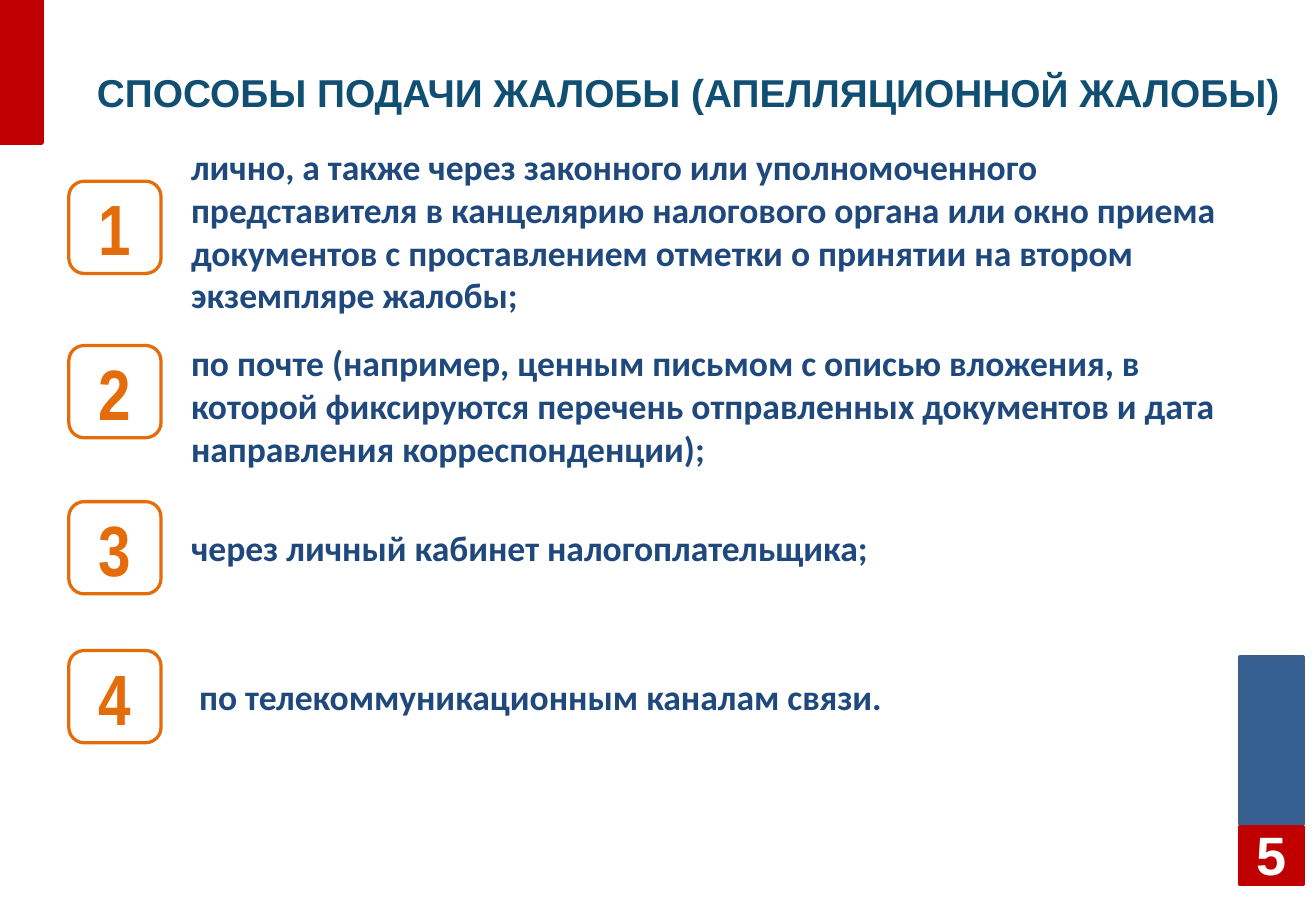
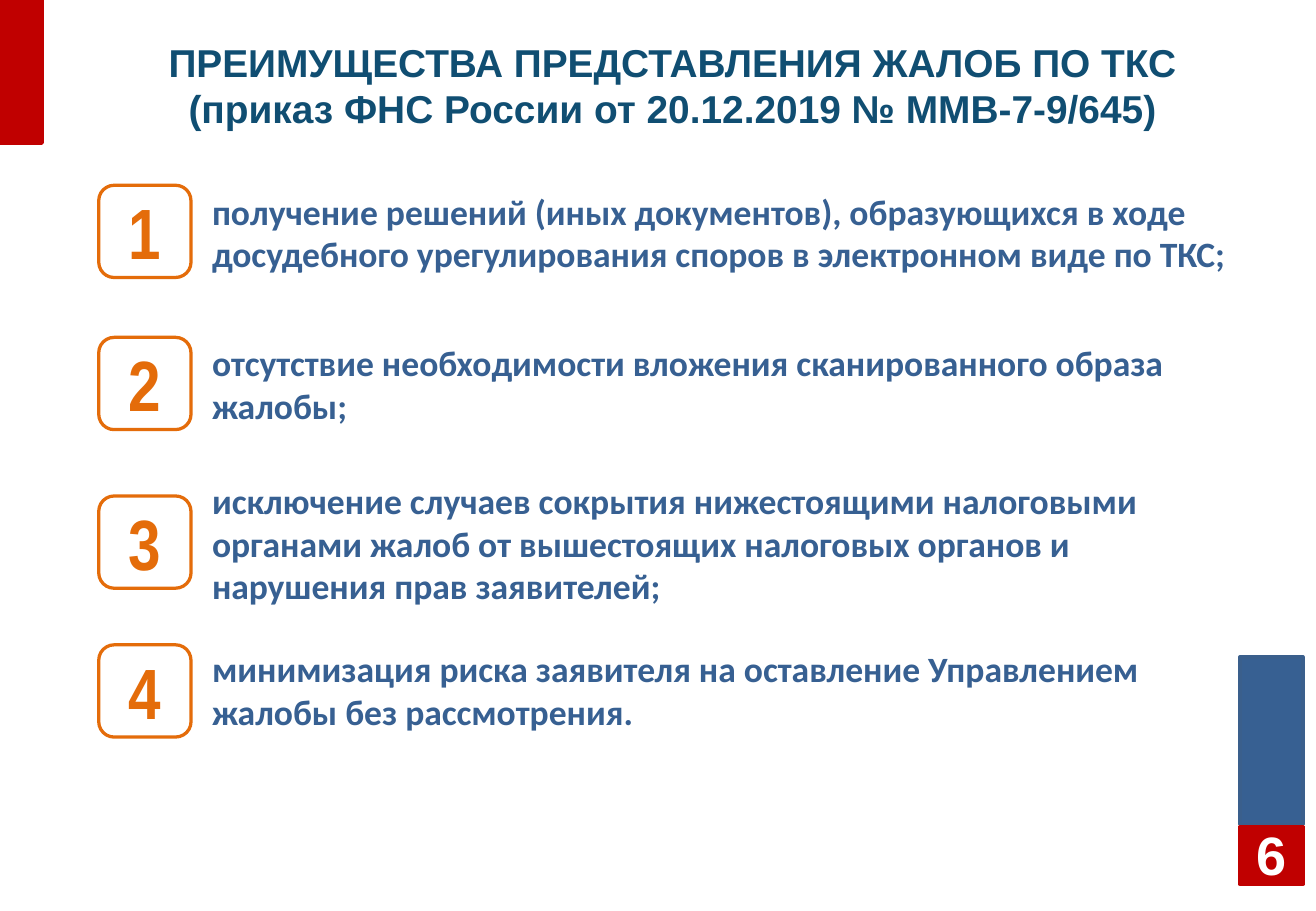
import pptx
import pptx.util
import pptx.dml.color
import pptx.enum.shapes
import pptx.enum.text

PX = 6350
RED, BLUE, NAVY, ORANGE, TEAL, WHITE = "C00000", "376092", "1F497D", "E46C0A", "104E72", "FFFFFF"
SHAPES = pptx.enum.shapes.MSO_SHAPE
ALIGN = pptx.enum.text.PP_ALIGN


def color(value):
    return pptx.dml.color.RGBColor.from_string(value)


def write(shape, text, name, size, text_color, align, insets=(0, 7)):
    frame = shape.text_frame
    frame.word_wrap = True
    frame.auto_size = pptx.enum.text.MSO_AUTO_SIZE.NONE
    frame.vertical_anchor = pptx.enum.text.MSO_ANCHOR.MIDDLE
    frame.margin_left = frame.margin_right = insets[0] * PX
    frame.margin_top = frame.margin_bottom = insets[1] * PX
    frame.text = text
    paragraph = frame.paragraphs[0]
    paragraph.alignment = align
    paragraph.font.name = name
    paragraph.font.size = pptx.util.Pt(size)
    paragraph.font.bold = True
    paragraph.font.color.rgb = color(text_color)


bands = [
    ((1532, 812, 78, 207), BLUE, "3A5F8C"),
    ((1532, 1022, 78, 71), RED, RED),
    ((0, 0, 52, 177), RED, RED),
]
pages = [
    {
        "number": "5",
        "title": "СПОСОБЫ ПОДАЧИ ЖАЛОБЫ (АПЕЛЛЯЦИОННОЙ ЖАЛОБЫ)",
        "title_box": (95, 39, 1511, 150),
        "badge_left": 85,
        "text_color": NAVY,
        "items": [
            (224, (236, 170, 1282, 230), "лично, а также через законного или уполномоченного представителя в канцелярию налогового органа или окно приема документов с проставлением отметки о принятии на втором экземпляре жалобы;"),
            (427, (236, 426, 1282, 150), "по почте (например, ценным письмом с описью вложения, в которой фиксируются перечень отправленных документов и дата направления корреспонденции);"),
            (620, (236, 601, 1282, 150), "через личный кабинет налогоплательщика;"),
            (804, (246, 786, 1282, 150), "по телекоммуникационным каналам связи."),
        ],
    },
    {
        "number": "6",
        "title": "ПРЕИМУЩЕСТВА ПРЕДСТАВЛЕНИЯ ЖАЛОБ ПО ТКС\v(приказ ФНС России от 20.12.2019 № ММВ-7-9/645)",
        "title_box": (190, 30, 1282, 150),
        "badge_left": 122,
        "text_color": BLUE,
        "items": [
            (229, (262, 212, 1282, 150), "получение решений (иных документов), образующихся в ходе досудебного урегулирования споров в электронном виде по ТКС;"),
            (417, (262, 399, 1282, 150), "отсутствие необходимости вложения сканированного образа жалобы;"),
            (613, (262, 596, 1282, 150), "исключение случаев сокрытия нижестоящими налоговыми органами жалоб от вышестоящих налоговых органов и нарушения прав заявителей;"),
            (797, (262, 797, 1282, 111), "минимизация риска заявителя на оставление Управлением жалобы без рассмотрения."),
        ],
    },
]

presentation = pptx.Presentation()
presentation.slide_width = 1626 * PX
presentation.slide_height = 1126 * PX
layout = presentation.slide_layouts[5]
slides = [presentation.slides.add_slide(layout) for page in pages]

for box, fill, line in bands:
    band = slides[0].shapes.add_shape(SHAPES.RECTANGLE, *[side * PX for side in box])
    band.shadow.inherit = False
    band.fill.solid()
    band.fill.fore_color.rgb = color(fill)
    band.line.color.rgb = color(line)
    band.line.width = pptx.util.Pt(2)
    layout.shapes.element.append(band.element)

for slide, page in zip(slides, pages):
    title = slide.shapes.title
    title.left, title.top, title.width, title.height = [side * PX for side in page["title_box"]]
    write(title, page["title"], "Arial", 24, TEAL, ALIGN.CENTER)

    page_number = slide.shapes.add_textbox(1529 * PX, 1025 * PX, 84 * PX, 60 * PX)
    write(page_number, page["number"], "Arial", 33.4, WHITE, ALIGN.CENTER)

    for number, (badge_top, box, text) in enumerate(page["items"], 1):
        badge = slide.shapes.add_shape(
            SHAPES.ROUNDED_RECTANGLE, page["badge_left"] * PX, badge_top * PX, 114 * PX, 114 * PX)
        badge.shadow.inherit = False
        badge.fill.background()
        badge.line.color.rgb = color(ORANGE)
        badge.line.width = pptx.util.Pt(2)
        write(badge, str(number), "Arial Narrow", 44, ORANGE, ALIGN.CENTER, (16, 9))

        item = slide.shapes.add_textbox(*[side * PX for side in box])
        write(item, text, "Calibri", 22, page["text_color"], ALIGN.LEFT)

presentation.save("out.pptx")
